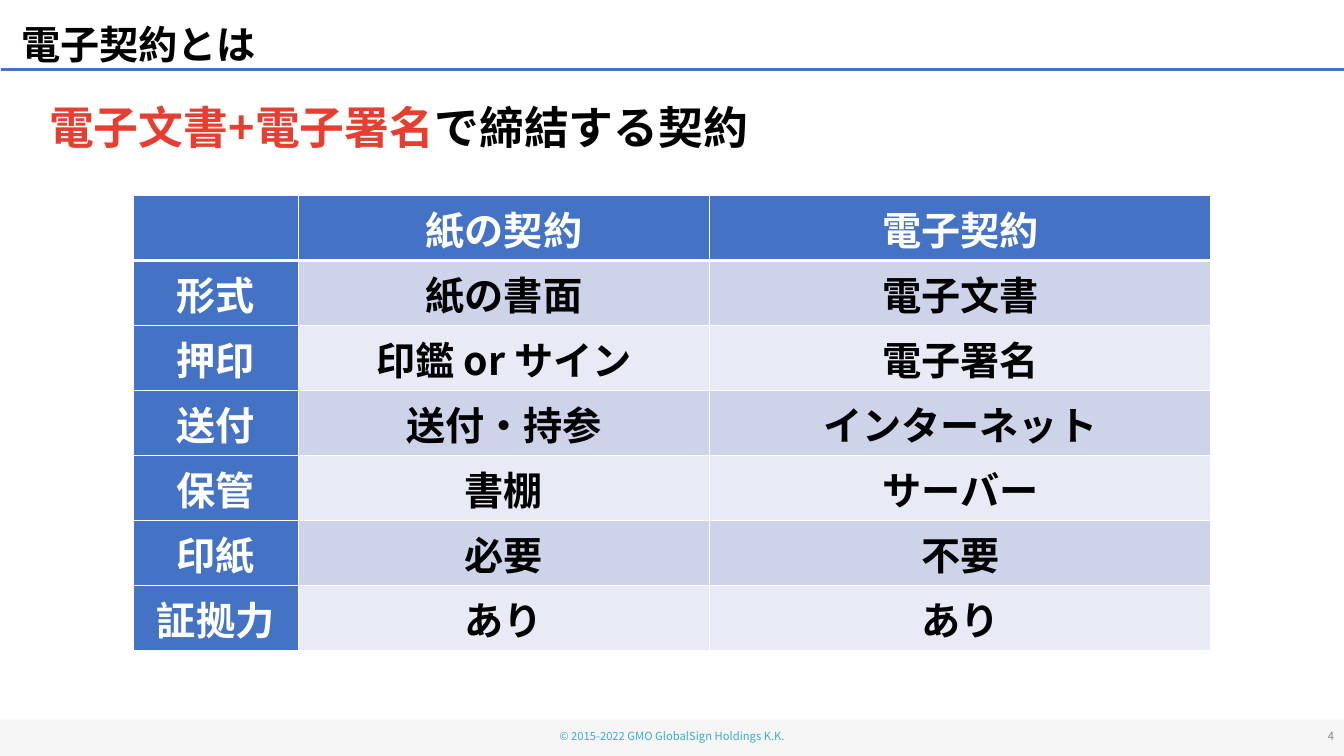
from dataclasses import dataclass

import pptx
import pptx.dml.color
import pptx.enum.shapes
import pptx.enum.text
import pptx.oxml
import pptx.oxml.ns
import pptx.util

Pt = pptx.util.Pt
Align = pptx.enum.text.PP_ALIGN
Anchor = pptx.enum.text.MSO_ANCHOR


@dataclass(frozen=True)
class Theme:
    font: str = "Noto Sans CJK JP"
    blue: str = "4472C4"
    band_dark: str = "CDD4EA"
    band_light: str = "E8EBF5"
    white: str = "FFFFFF"
    black: str = "000000"
    red: str = "E63E31"
    footer_fill: str = "F5F5F5"
    copyright: str = "3AAFC5"
    number: str = "888888"
    heading_size: int = 32
    body_size: int = 28
    footer_size: int = 8


THEME = Theme()


@dataclass(frozen=True)
class Span:
    text: str
    color: str


@dataclass(frozen=True)
class Label:
    left: float
    top: float
    width: float
    height: float
    spans: tuple[Span, ...]
    size: int
    bold: bool = False
    align: Align = Align.LEFT
    anchor: Anchor = Anchor.TOP
    spacing: float = 1.0
    grow: bool = False


def rgb(color: str) -> pptx.dml.color.RGBColor:
    return pptx.dml.color.RGBColor.from_string(color)


def write_spans(paragraph, spans: tuple[Span, ...], size: int, bold: bool, align: Align) -> None:
    paragraph.alignment = align
    runs = [paragraph.add_run() for _ in spans]
    for run, span in zip(runs, spans):
        run.text = span.text
    font = paragraph.font
    font.name = THEME.font
    font.size = Pt(size)
    font.bold = bold
    east_asian = pptx.oxml.parse_xml(
        f'<a:ea {pptx.oxml.ns.nsdecls("a")} typeface="{THEME.font}"/>'
    )
    font._element.append(east_asian)
    if len(spans) == 1:
        font.color.rgb = rgb(spans[0].color)
    else:
        for run, span in zip(runs, spans):
            run.font.color.rgb = rgb(span.color)


def draw_label(slide, label: Label) -> None:
    box = slide.shapes.add_textbox(
        Pt(label.left), Pt(label.top), Pt(label.width), Pt(label.height)
    )
    frame = box.text_frame
    frame.word_wrap = True
    frame.vertical_anchor = label.anchor
    if label.grow:
        frame.auto_size = pptx.enum.text.MSO_AUTO_SIZE.SHAPE_TO_FIT_TEXT
    paragraph = frame.paragraphs[0]
    paragraph.line_spacing = label.spacing
    write_spans(paragraph, label.spans, label.size, label.bold, label.align)


def draw_borders(cell, row: int) -> None:
    widths = {"L": 1, "R": 1, "T": 3 if row == 1 else 1, "B": 3 if row == 0 else 1}
    properties = cell._tc.get_or_add_tcPr()
    for position, (side, width) in enumerate(widths.items()):
        border = pptx.oxml.parse_xml(
            f'<a:ln{side} {pptx.oxml.ns.nsdecls("a")} w="{int(Pt(width))}">'
            f'<a:solidFill><a:srgbClr val="{THEME.white}"/></a:solidFill></a:ln{side}>'
        )
        properties.insert(position, border)


def draw_comparison(slide, rows: tuple[tuple[str, str, str], ...]) -> None:
    widths = (118, 294, 358)
    heights = (43.2,) + (45.36,) * (len(rows) - 1)
    comparison = slide.shapes.add_table(
        len(rows), len(widths), Pt(95), Pt(139.7), Pt(sum(widths)), Pt(sum(heights))
    ).table
    comparison.horz_banding = False
    for column, width in zip(comparison.columns, widths):
        column.width = Pt(width)
    for r, (entries, height) in enumerate(zip(rows, heights)):
        comparison.rows[r].height = Pt(height)
        for c, entry in enumerate(entries):
            cell = comparison.cell(r, c)
            heading = r == 0 or c == 0
            band = THEME.band_dark if r % 2 else THEME.band_light
            cell.fill.solid()
            cell.fill.fore_color.rgb = rgb(THEME.blue if heading else band)
            cell.margin_left = cell.margin_right = Pt(5)
            cell.margin_top = cell.margin_bottom = Pt(3)
            low = c == 0 and 0 < r < len(rows) - 1
            cell.vertical_anchor = Anchor.BOTTOM if low else Anchor.MIDDLE
            draw_borders(cell, r)
            if entry:
                span = Span(entry, THEME.white if heading else THEME.black)
                write_spans(
                    cell.text_frame.paragraphs[0], (span,), THEME.body_size, True, Align.CENTER
                )


def draw_frame(slide) -> None:
    footer = slide.shapes.add_shape(
        pptx.enum.shapes.MSO_SHAPE.RECTANGLE, Pt(0), Pt(514), Pt(960), Pt(26)
    )
    footer.shadow.inherit = False
    footer.fill.solid()
    footer.fill.fore_color.rgb = rgb(THEME.footer_fill)
    footer.line.fill.background()
    rule = slide.shapes.add_connector(
        pptx.enum.shapes.MSO_CONNECTOR.STRAIGHT, Pt(0.7), Pt(49.7), Pt(960), Pt(49.7)
    )
    rule.line.color.rgb = rgb(THEME.blue)
    rule.line.width = Pt(2.25)
    rule._element.spPr.append(
        pptx.oxml.parse_xml(f'<a:effectLst {pptx.oxml.ns.nsdecls("a")}/>')
    )


LABELS = (
    Label(318.2, 511.2, 324, 28.8,
          (Span("© 2015-2022 GMO GlobalSign Holdings K.K.", THEME.copyright),),
          THEME.footer_size, align=Align.CENTER, anchor=Anchor.MIDDLE),
    Label(744, 511.2, 216, 28.8, (Span("4", THEME.number),),
          THEME.footer_size, align=Align.RIGHT, anchor=Anchor.MIDDLE),
    Label(8, 15, 652, 32.4, (Span("電子契約とは", THEME.black),),
          THEME.body_size, bold=True, spacing=0.9),
    Label(28, 72, 932, 46,
          (Span("電子文書+電子署名", THEME.red), Span("で締結する契約", THEME.black)),
          THEME.heading_size, bold=True, spacing=0.9, grow=True),
)

COMPARISON = (
    ("", "紙の契約", "電子契約"),
    ("形式", "紙の書面", "電子文書"),
    ("押印", "印鑑 or サイン", "電子署名"),
    ("送付", "送付・持参", "インターネット"),
    ("保管", "書棚", "サーバー"),
    ("印紙", "必要", "不要"),
    ("証拠力", "あり", "あり"),
)


def main() -> None:
    presentation = pptx.Presentation()
    presentation.slide_width = Pt(960)
    presentation.slide_height = Pt(540)
    slide = presentation.slides.add_slide(presentation.slide_layouts[6])
    draw_frame(slide)
    draw_comparison(slide, COMPARISON)
    for label in LABELS:
        draw_label(slide, label)
    presentation.save("out.pptx")


if __name__ == "__main__":
    main()
